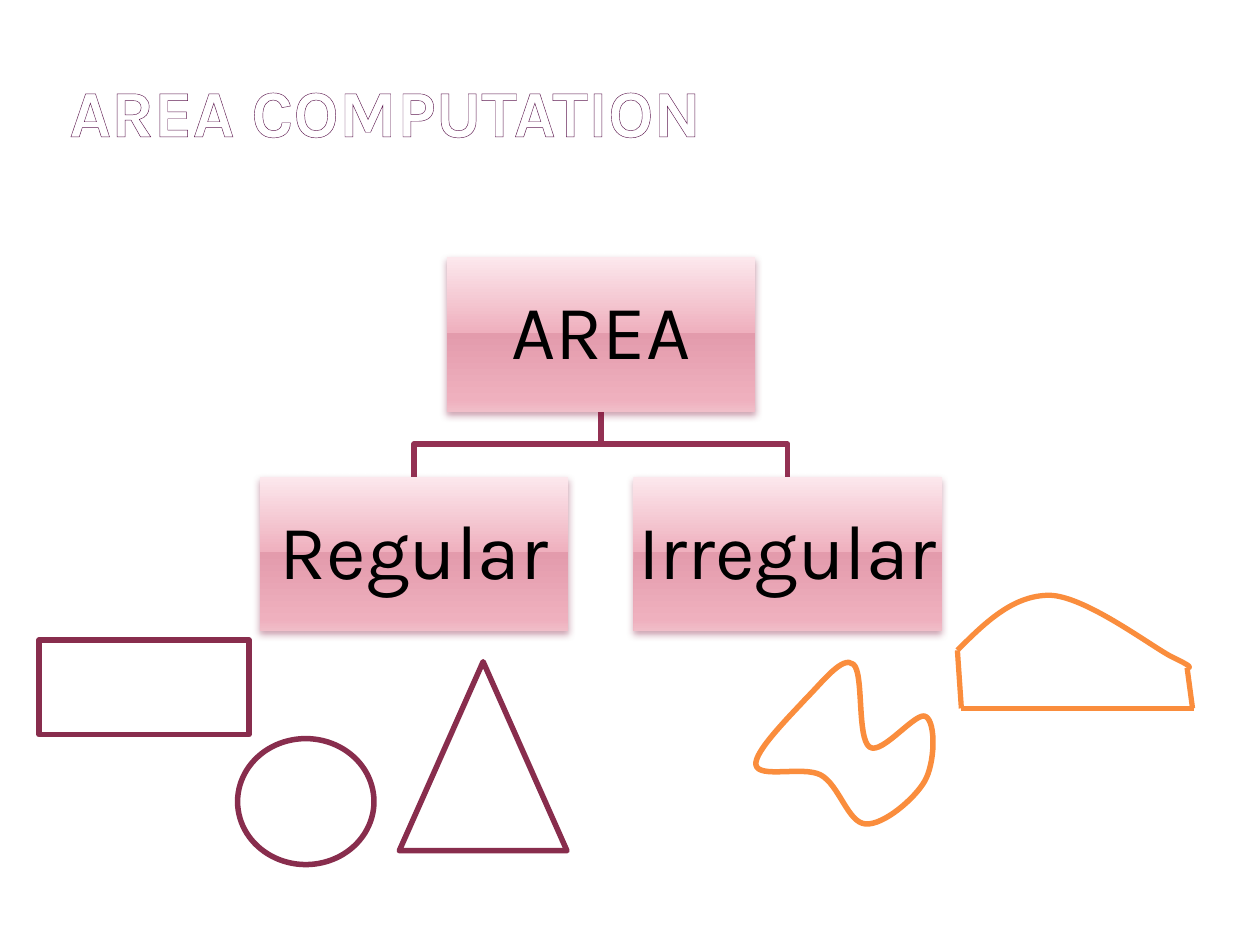
from dataclasses import dataclass
from lxml.etree import SubElement as Sub
from pptx import Presentation
from pptx.dml.color import RGBColor as Rgb
from pptx.enum.shapes import MSO_CONNECTOR as Link, MSO_SHAPE as Kind
from pptx.enum.text import MSO_ANCHOR as Anchor, PP_ALIGN as Align
from pptx.oxml.ns import qn
from pptx.util import Cm, Pt


@dataclass(frozen=True)
class Theme:
    font: str = "Karla"
    head: int = 38
    label: int = 44
    white: str = "FFFFFF"
    black: str = "000000"
    edge: str = "5E1A50"
    tree: str = "933153"
    plum: str = "882D4D"
    amber: str = "FA8D3D"
    shade: str = "7F1238"
    stops: tuple = ((0, "FCE8ED"), (49, "EFB0BE"), (49, "E39BAC"),
                    (92, "EFB0BE"), (100, "F0BEC9"))
    thick: float = 3.15
    thin: float = 3


T = Theme()

# Chart grid, in centimetres
WIDE, HIGH = 6.22, 3.12
MID, TOP, LOW = 12.12, 5.18, 9.61
KIDS = ((8.35, "Regular"), (15.88, "Irregular"))

# Bezier outlines: a start, then two handles and an end for each curve
BLOB = ((17.53, 15.06),
        (17.27, 14.88), (17.42, 13.54), (17.2, 13.39),
        (16.99, 13.21), (16.59, 13.74), (16.26, 14.07),
        (15.93, 14.43), (15.19, 15.16), (15.24, 15.42),
        (15.29, 15.7), (16.18, 15.44), (16.54, 15.62),
        (16.92, 15.82), (17.09, 16.59), (17.45, 16.61),
        (17.81, 16.64), (18.44, 16.1), (18.64, 15.75),
        (18.85, 15.39), (18.87, 14.58), (18.67, 14.45),
        (18.49, 14.3), (17.78, 15.24), (17.53, 15.06))
ARCH = ((19.3, 13.11),
        (19.86, 12.55), (20.42, 12), (21.16, 12),
        (21.87, 12.02), (23.14, 12.98), (23.6, 13.23),
        (24.08, 13.46), (24, 13.46), (23.93, 13.46))


def style(font, size, color):
    font.name, font.size = T.font, Pt(size)
    font.color.rgb = Rgb.from_string(color)


def stroke(item, color, width):
    item.line.color.rgb = Rgb.from_string(color)
    item.line.width = Pt(width)


def hollow(shape, color, width):
    shape.shadow.inherit = False
    shape.fill.background()
    stroke(shape, color, width)


def outline(slide, kind, x, y, w, h):
    shape = slide.shapes.add_shape(kind, Cm(x), Cm(y), Cm(w), Cm(h))
    hollow(shape, T.plum, T.thick)


def trace(slide, points, color, width, close=False):
    dots = [(Cm(x), Cm(y)) for x, y in points]
    pen = slide.shapes.build_freeform(*dots[0])
    pen.add_line_segments(dots[1:], close=close)
    shape = pen.convert_to_shape()
    hollow(shape, color, width)
    return shape


def bend(shape):
    """Turn each three segments of a freeform into one cubic curve."""
    legs = list(shape._element.iter(qn("a:lnTo")))
    for i in range(0, len(legs) - 2, 3):
        first, *rest = legs[i:i + 3]
        cubic = first.makeelement(qn("a:cubicBezTo"))
        first.addprevious(cubic)
        for leg in (first, *rest):
            cubic.append(leg[0])
            leg.getparent().remove(leg)


def line(slide, start, end):
    link = slide.shapes.add_connector(Link.STRAIGHT, *map(Cm, start + end))
    stroke(link, T.amber, T.thin)
    Sub(link._element.spPr, qn("a:effectLst"))


def tint(parent, color):
    return Sub(parent, qn("a:srgbClr"), val=color)


def box(slide, mid, top, text):
    shape = slide.shapes.add_shape(Kind.RECTANGLE, Cm(mid - WIDE / 2), Cm(top),
                                   Cm(WIDE), Cm(HIGH))
    shape.line.fill.background()
    # Glossy fill
    shape.fill.gradient()
    shape.fill.gradient_angle = 270
    props = shape._element.spPr
    stops = props.find(qn("a:gradFill")).find(qn("a:gsLst"))
    for old in list(stops):
        stops.remove(old)
    for pos, color in T.stops:
        tint(Sub(stops, qn("a:gs"), pos=str(pos * 1000)), color)
    # Soft shadow
    shape.shadow.inherit = False
    cast = Sub(props.find(qn("a:effectLst")), qn("a:outerShdw"), blurRad=str(Pt(4)),
               dist=str(Pt(2)), dir="5400000", rotWithShape="0")
    Sub(tint(cast, T.shade), qn("a:alpha"), val="38000")
    # Label
    frame = shape.text_frame
    frame.word_wrap = True
    frame.vertical_anchor = Anchor.MIDDLE
    frame.margin_left = frame.margin_right = Cm(0.08)
    frame.margin_top = frame.margin_bottom = Cm(0.08)
    para = frame.paragraphs[0]
    para.text = text
    para.alignment = Align.CENTER
    para.line_spacing = 0.9
    style(para.font, T.label, T.black)


def title(slide, text):
    head = slide.shapes.title
    head.left, head.top, head.width, head.height = map(Cm, (1.27, 0.9, 20.12, 2.13))
    frame = head.text_frame
    frame.word_wrap = True
    frame.vertical_anchor = Anchor.BOTTOM
    frame.margin_left = frame.margin_right = Cm(0.13)
    frame.margin_top = frame.margin_bottom = 0
    para = frame.paragraphs[0]
    para.alignment = Align.LEFT
    run = para.add_run()
    run.text = text
    style(run.font, T.head, T.white)
    run.font.bold = True
    # Letter outline goes before the fill
    props = run._r.get_or_add_rPr()
    edge = Sub(props, qn("a:ln"), w=str(Pt(0.04)))
    tint(Sub(edge, qn("a:solidFill")), T.edge)
    props.insert(0, edge)


def main():
    deck = Presentation()
    deck.slide_width, deck.slide_height = Cm(25.4), Cm(19.05)
    slide = deck.slides.add_slide(deck.slide_layouts[5])
    title(slide, "AREA COMPUTATION")

    # Tree: branches behind boxes
    base = TOP + HIGH
    fork = (base + LOW) / 2
    for mid, _ in reversed(KIDS):
        trace(slide, ((MID, base), (MID, fork), (mid, fork), (mid, LOW)),
              T.tree, T.thick)
    box(slide, MID, TOP, "AREA")
    for mid, text in KIDS:
        box(slide, mid, LOW, text)

    # Regular figures
    outline(slide, Kind.RECTANGLE, 0.79, 12.9, 4.23, 1.91)
    outline(slide, Kind.ISOSCELES_TRIANGLE, 8.05, 13.34, 3.38, 3.81)
    outline(slide, Kind.OVAL, 4.79, 14.89, 2.75, 2.54)

    # Irregular figures
    corner, end = (19.38, 14.28), (24.04, 14.28)
    bend(trace(slide, BLOB, T.amber, T.thick, close=True))
    line(slide, corner, (24.07, 14.28))
    bend(trace(slide, ARCH, T.amber, T.thin))
    line(slide, corner, ARCH[0])
    line(slide, end, ARCH[-1])

    deck.save("out.pptx")


if __name__ == "__main__":
    main()
